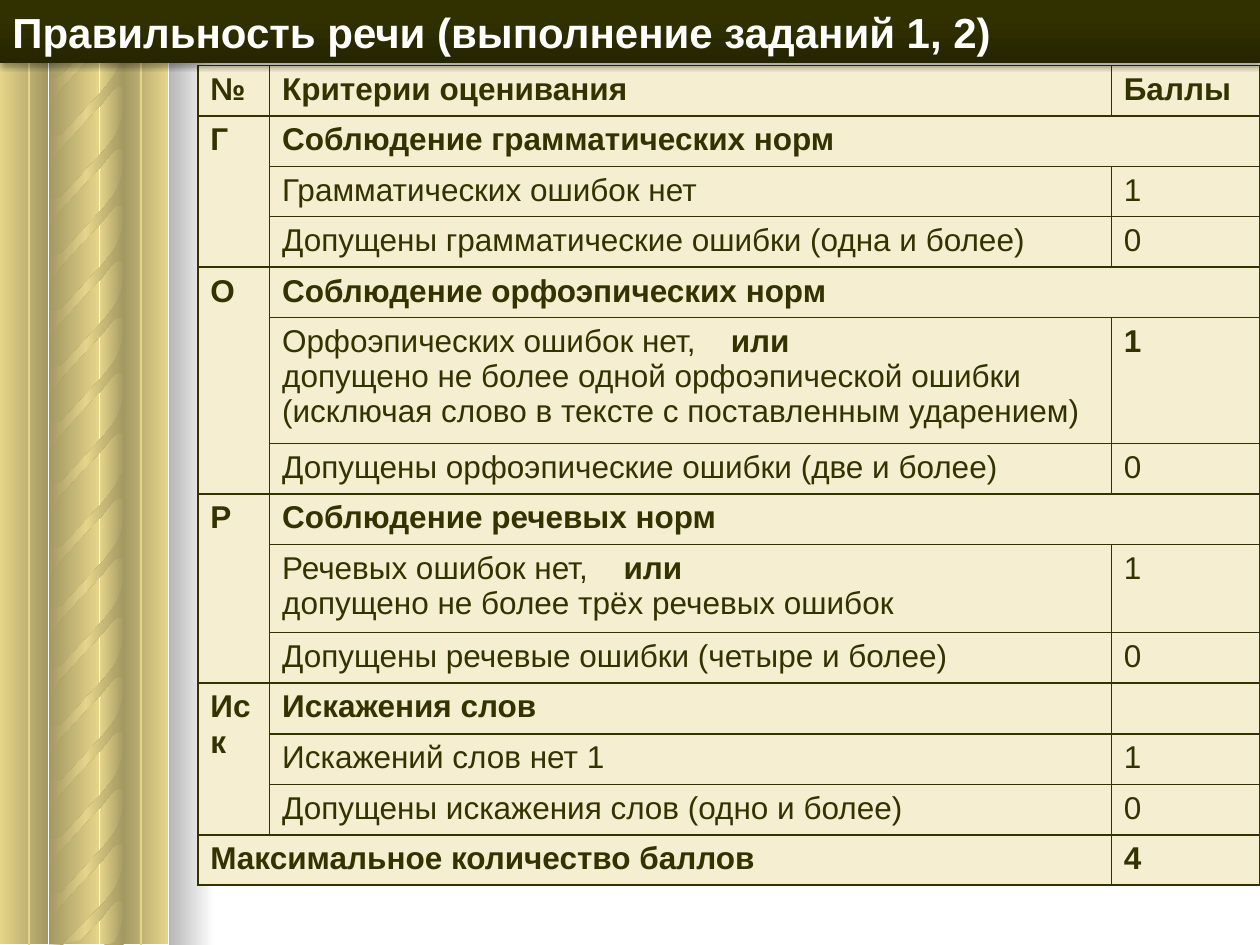
from lxml import etree
from pptx import Presentation
from pptx.dml.color import RGBColor
from pptx.enum.shapes import MSO_CONNECTOR, MSO_SHAPE
from pptx.enum.text import MSO_ANCHOR, PP_ALIGN
from pptx.oxml import parse_xml
from pptx.oxml.ns import nsdecls, qn
from pptx.util import Inches, Pt

RECT = MSO_SHAPE.RECTANGLE
STRAIGHT = MSO_CONNECTOR.STRAIGHT
LEFT = PP_ALIGN.LEFT
MIDDLE = MSO_ANCHOR.MIDDLE

FONT = "Arial"
COLORS = {"gold": "E5D58A", "bronze": "A49863", "gray": "B6B6B6", "white": "FFFFFF",
          "ink": "333300", "cream": "F5EED0",
          "olive_dark": "262600", "olive_mid": "313100", "olive": "323200"}
LIGHT_TO_DARK = [(0, "gold"), (100, "bronze")]
DARK_TO_LIGHT = [(0, "bronze"), (100, "gold")]
GLINT = [(0, "bronze"), (50, "gold"), (100, "bronze")]

# left, width, gradient of the column's vertical strips
STRIPS = [(0.79, 0.2, LIGHT_TO_DARK), (0, 0.38, LIGHT_TO_DARK),
          (0.39, 0.4, DARK_TO_LIGHT), (0.98, 0.35, DARK_TO_LIGHT)]
# top of the strips, tops of the twisted bands drawn over them
COLUMN_HALVES = [
    (3.73, [4.58, 5.05, 5.49, 5.94, 6.38, 6.83, 4.11, 3.64]),
    (0, [0.86, 1.31, 1.75, 2.2, 2.64, 7.25, 0.37, -0.1, -0.62, 3.12]),
]
# x on the slide, y below the top of the band
BAND = [(0.98, 0.09), (0.98, 0.33), (0.97, 0.32), (0.93, 0.32), (0.91, 0.33),
        (0.88, 0.36), (0.81, 0.45), (0.64, 0.63), (0.47, 0.82), (0.44, 0.87),
        (0.41, 0.93), (0.4, 1.01), (0.39, 1.12), (0.39, 0.63), (0.39, 0.68),
        (0.4, 0.7), (0.42, 0.71), (0.44, 0.71), (0.46, 0.71), (0.49, 0.7),
        (0.83, 0.33), (0.9, 0.24), (0.93, 0.19), (0.95, 0.14), (0.97, 0.07),
        (0.98, 0), (0.98, 0.2)]

# Text between asterisks is bold
CRITERIA = [
    ("*№*", "*Критерии оценивания*", "*Баллы*"),
    ("*Г*", "*Соблюдение грамматических норм*", ""),
    ("", "Грамматических ошибок нет", "1"),
    ("", "Допущены грамматические ошибки (одна и более)", "0"),
    ("*О*", "*Соблюдение орфоэпических норм*", ""),
    ("", "Орфоэпических ошибок нет,\t*или*\n"
         "допущено не более одной орфоэпической ошибки\n"
         "(исключая слово в тексте с поставленным ударением)", "*1*"),
    ("", "Допущены орфоэпические ошибки (две и более)", "0"),
    ("*Р*", "*Соблюдение речевых норм*", ""),
    ("", "Речевых ошибок нет,\t*или*\nдопущено не более трёх речевых ошибок", "1"),
    ("", "Допущены речевые ошибки (четыре и более)", "0"),
    ("*Иск*", "*Искажения слов*", ""),
    ("", "Искажений слов нет 1", "1"),
    ("", "Допущены искажения слов (одно и более)", "0"),
    ("*Максимальное количество баллов*", "", "*4*"),
]
COLUMN_WIDTHS = [0.57, 6.68, 1.18]
ROW_HEIGHT = 0.4
TALL_ROWS = {5: 1.0, 8: 0.7}
TAB_STOPS = {5: 3.56, 8: 2.71}
GROUP_STARTS = [1, 4, 7, 10]
GROUP_ROWS = 3
UNSCORED_HEADINGS = [1, 4, 7]


def rgb(color):
    return RGBColor.from_string(COLORS[color])


def paint_gradient(shape, stops, angle=0):
    """Fill the shape with a linear gradient and remove its outline and shadow."""
    shape.shadow.inherit = False
    shape.line.fill.background()
    shape.fill.gradient()
    marks = "".join(f'<a:gs pos="{pos * 1000}"><a:srgbClr val="{COLORS[color]}"/></a:gs>'
                    for pos, color in stops)
    gradient = parse_xml(f'<a:gradFill {nsdecls("a")} rotWithShape="1"><a:gsLst>{marks}</a:gsLst>'
                         f'<a:lin ang="{angle * 60000}" scaled="0"/></a:gradFill>')
    properties = shape._element.spPr
    properties.replace(properties.find(qn("a:gradFill")), gradient)


def add_strip(slide, left, top, width, height, stops, angle=0):
    strip = slide.shapes.add_shape(RECT, Inches(left), Inches(top), Inches(width), Inches(height))
    paint_gradient(strip, stops, angle)
    return strip


def add_band(slide, top, ceiling):
    """Draw one twist of the column, cut off at the ceiling and the slide's bottom."""
    outline = [(Inches(x), Inches(min(max(top + y, ceiling), 7.5))) for x, y in BAND]
    builder = slide.shapes.build_freeform(*outline[0])
    builder.add_line_segments(outline[1:], close=True)
    paint_gradient(builder.convert_to_shape(), GLINT)


def add_groove(slide, x):
    groove = slide.shapes.add_connector(STRAIGHT, Inches(x), 0, Inches(x), Inches(7.5))
    groove.line.color.rgb = rgb("gold")
    groove.line.width = Pt(1)
    etree.SubElement(groove._element.spPr, qn("a:effectLst"))


def add_column(slide):
    for top, band_tops in COLUMN_HALVES:
        for left, width, stops in STRIPS:
            add_strip(slide, left, top, width, 3.76, stops)
        for band_top in band_tops:
            add_band(slide, band_top, top)
    add_strip(slide, 1.34, 0, 0.36, 7.5, [(0, "gray"), (100, "white")])
    for x in (0.23, 1.12):
        add_groove(slide, x)


def format_run(run, size, color, bold):
    run.font.name = FONT
    run.font.size = Pt(size)
    run.font.bold = bold
    run.font.color.rgb = rgb(color)


def write_cell(cell, text):
    for index, line in enumerate(text.split("\n")):
        paragraphs = cell.text_frame.paragraphs
        paragraph = cell.text_frame.add_paragraph() if index else paragraphs[0]
        for part, words in enumerate(line.split("*")):
            if words:
                run = paragraph.add_run()
                run.text = words
                format_run(run, 18, "ink", part % 2 == 1)


def style_cell(cell):
    properties = cell._tc.get_or_add_tcPr()
    for side in ("lnL", "lnR", "lnT", "lnB"):
        properties.append(parse_xml(
            f'<a:{side} {nsdecls("a")} w="12700"><a:solidFill>'
            f'<a:srgbClr val="{COLORS["ink"]}"/></a:solidFill></a:{side}>'))
    cell.fill.solid()
    cell.fill.fore_color.rgb = rgb("cream")


def add_tab_stop(paragraph, position):
    tabs = etree.SubElement(paragraph._p.get_or_add_pPr(), qn("a:tabLst"))
    etree.SubElement(tabs, qn("a:tab"), pos=str(Inches(position)), algn="l")


def add_criteria_table(slide):
    heights = [TALL_ROWS.get(row, ROW_HEIGHT) for row in range(len(CRITERIA))]
    table = slide.shapes.add_table(
        len(CRITERIA), len(COLUMN_WIDTHS), Inches(1.57), Inches(0.52),
        Inches(sum(COLUMN_WIDTHS)), Inches(sum(heights))).table
    table.first_row = table.horz_banding = False
    for column, width in zip(table.columns, COLUMN_WIDTHS):
        column.width = Inches(width)
    for row, height in zip(table.rows, heights):
        row.height = Inches(height)
    for row, texts in enumerate(CRITERIA):
        for column, text in enumerate(texts):
            cell = table.cell(row, column)
            style_cell(cell)
            write_cell(cell, text)
            if not text:
                cell.text_frame.paragraphs[0].font.size = Pt(18)
    for row, position in TAB_STOPS.items():
        add_tab_stop(table.cell(row, 1).text_frame.paragraphs[0], position)
    for start in GROUP_STARTS:
        table.cell(start, 0).merge(table.cell(start + GROUP_ROWS - 1, 0))
    for row in UNSCORED_HEADINGS:
        table.cell(row, 1).merge(table.cell(row, 2))
    total = len(CRITERIA) - 1
    table.cell(total, 0).merge(table.cell(total, 1))


def add_title(slide, text):
    stops = [(0, "olive_dark"), (80, "olive_mid"), (100, "olive")]
    banner = add_strip(slide, 0, 0, 10, 0.5, stops, angle=270)
    banner._element.spPr.find(qn("a:effectLst")).append(parse_xml(
        f'<a:outerShdw {nsdecls("a")} blurRad="40000" dist="23000" dir="5400000" rotWithShape="0">'
        '<a:srgbClr val="000000"><a:alpha val="35000"/></a:srgbClr></a:outerShdw>'))
    frame = banner.text_frame
    frame.word_wrap = True
    frame.vertical_anchor = MIDDLE
    frame.text = text
    frame.paragraphs[0].alignment = LEFT
    format_run(frame.paragraphs[0].runs[0], 24, "white", True)


def main():
    deck = Presentation()
    deck.slide_width, deck.slide_height = Inches(10), Inches(7.5)
    slide = deck.slides.add_slide(deck.slide_layouts[6])
    add_column(slide)
    add_criteria_table(slide)
    add_title(slide, "Правильность речи (выполнение заданий 1, 2)")
    deck.save("out.pptx")


if __name__ == "__main__":
    main()
